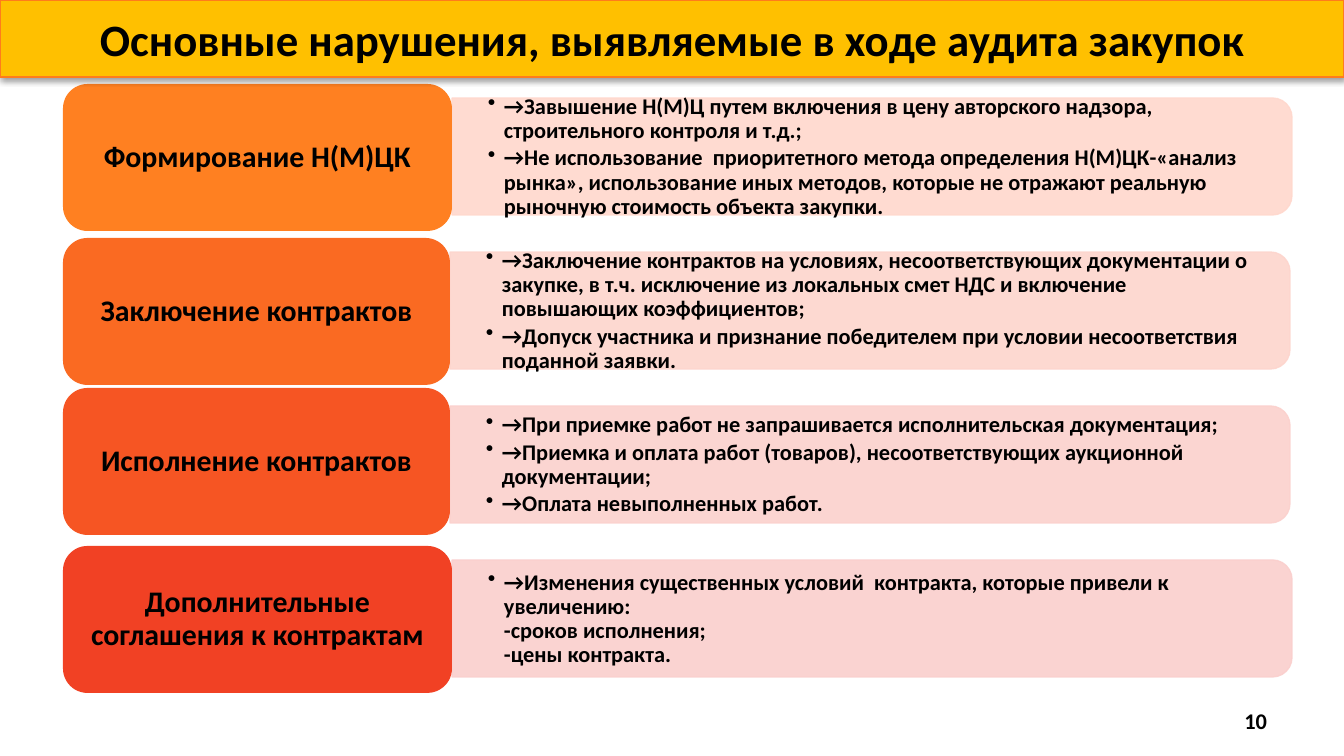
from lxml.etree import SubElement
from pptx import Presentation
from pptx.dml.color import RGBColor
from pptx.enum.shapes import MSO_SHAPE as Shape
from pptx.enum.text import MSO_ANCHOR as Anchor, PP_ALIGN as Align
from pptx.oxml.ns import qn
from pptx.util import Emu, Pt

EMU_PER_PX = 914400 / 134.4
PAGE_WIDTH, PAGE_HEIGHT = 1344, 756
BLACK = RGBColor(0, 0, 0)
GOLD = RGBColor(0xFF, 0xC0, 0x00)
ORANGE = RGBColor(0xFF, 0x7C, 0x1B)

PANEL_TOP, PANEL_STEP = 98, 154
PANEL_WIDTH, PANEL_HEIGHT = 840, 117
LABEL_LEFT, LABEL_HEIGHT = 63, 147

# label, label top, label width, label colour, panel colour, violations
STAGES = [
    ("Формирование Н(М)ЦК", 84, 389, RGBColor(0xFF, 0x80, 0x21), RGBColor(0xFF, 0xD8, 0xCD), [
        "→Завышение Н(М)Ц путем включения в цену авторского надзора, "
        "строительного контроля и т.д.;",
        "→Не использование  приоритетного метода определения Н(М)ЦК-«анализ рынка», "
        "использование иных методов, которые не отражают реальную рыночную "
        "стоимость объекта закупки."]),
    ("Заключение контрактов", 238, 387, RGBColor(0xFA, 0x6A, 0x22), RGBColor(0xFD, 0xD5, 0xCD), [
        "→Заключение контрактов на условиях, несоответствующих документации о закупке, "
        "в т.ч. исключение из локальных смет НДС и включение повышающих коэффициентов;",
        "→Допуск участника и признание победителем при условии несоответствия "
        "поданной заявки."]),
    ("Исполнение контрактов", 388, 387, RGBColor(0xF6, 0x55, 0x23), RGBColor(0xFB, 0xD1, 0xCD), [
        "→При приемке работ не запрашивается исполнительская документация;",
        "→Приемка и оплата работ (товаров), несоответствующих аукционной документации;",
        "→Оплата невыполненных работ."]),
    ("Дополнительные соглашения к контрактам", 546, 389,
     RGBColor(0xF1, 0x41, 0x24), RGBColor(0xFA, 0xCF, 0xCD), [
         "→Изменения существенных условий  контракта, которые привели к увеличению:\n"
         "-сроков исполнения;\n-цены контракта."]),
]


def px(length):
    return Emu(round(length * EMU_PER_PX))


class Painter:
    def __init__(self, page, font="Calibri", color=BLACK):
        self.page, self.font, self.color = page, font, color

    def add_text(self, para, text, size):
        """Add bold runs, with a line break at each newline."""
        for index, line in enumerate(text.split("\n")):
            if index:
                para.add_line_break()
            span = para.add_run()
            span.text = line
            span.font.name, span.font.size = self.font, Pt(size)
            span.font.bold, span.font.color.rgb = True, self.color

    def frame(self, shape, inset_x, inset_y):
        frame = shape.text_frame
        frame.word_wrap = True
        frame.vertical_anchor = Anchor.MIDDLE
        frame.margin_left = frame.margin_right = px(inset_x)
        frame.margin_top = frame.margin_bottom = px(inset_y)
        return frame

    def shape(self, kind, left, top, width, height, fill, line=None):
        shape = self.page.shapes.add_shape(kind, px(left), px(top), px(width), px(height))
        shape.shadow.inherit = False
        shape.fill.solid()
        shape.fill.fore_color.rgb = fill
        if line is None:
            shape.line.fill.background()
        else:
            shape.line.color.rgb, shape.line.width = line, Pt(0.75)
        return shape

    def textbox(self, left, top, width, height):
        return self.page.shapes.add_textbox(px(left), px(top), px(width), px(height))

    def banner(self, text):
        box = self.shape(Shape.ROUNDED_RECTANGLE, 0, 0, PAGE_WIDTH, 77, GOLD, ORANGE)
        box.adjustments[0] = 0
        effects = box.element.spPr.find(qn("a:effectLst"))
        shadow = SubElement(effects, qn("a:outerShdw"), blurRad=str(Pt(3.1)), dist=str(Pt(1.6)),
                            dir="5400000", rotWithShape="0")
        color = SubElement(shadow, qn("a:srgbClr"), val=str(BLACK))
        SubElement(color, qn("a:alpha"), val="38000")
        para = self.frame(box, 13, 7).paragraphs[0]
        para.alignment = Align.CENTER
        self.add_text(para, text, 24)

    def panel(self, left, top, fill):
        """Draw a translucent panel rounded on its right: a turned top-rounded shape."""
        shift = (PANEL_WIDTH - PANEL_HEIGHT) / 2
        panel = self.shape(Shape.ROUND_2_SAME_RECTANGLE, left + shift, top - shift,
                           PANEL_HEIGHT, PANEL_WIDTH, fill, fill)
        panel.rotation = 90
        for color in panel.element.spPr.iter(qn("a:srgbClr")):
            SubElement(color, qn("a:alpha"), val="90000")

    def bullets(self, left, top, items):
        frame = self.frame(self.textbox(left, top + 6, 835, 106), 36, 19)
        for index, item in enumerate(items):
            para = frame.add_paragraph() if index else frame.paragraphs[0]
            props = para._p.get_or_add_pPr()
            props.set("marL", str(px(16)))
            props.set("indent", str(px(-16)))
            SubElement(props, qn("a:buChar"), char="•")
            para.level = 1
            para.line_spacing, para.space_after = 0.9, Pt(1.8)
            self.add_text(para, item, 12)

    def label(self, text, top, width, fill):
        box = self.shape(Shape.ROUNDED_RECTANGLE, LABEL_LEFT, top, width, LABEL_HEIGHT, fill)
        para = self.frame(box, 17, 12).paragraphs[0]
        para.alignment, para.line_spacing = Align.CENTER, 0.9
        self.add_text(para, text, 16)

    def page_number(self, text):
        para = self.frame(self.textbox(1228, 700, 52, 41), 13, 7).paragraphs[0]
        para.alignment = Align.RIGHT
        self.add_text(para, text, 12)


def main():
    deck = Presentation()
    deck.slide_width, deck.slide_height = px(PAGE_WIDTH), px(PAGE_HEIGHT)
    painter = Painter(deck.slides.add_slide(deck.slide_layouts[6]))
    for row, (name, top, width, fill, tint, violations) in enumerate(STAGES):
        panel_left = LABEL_LEFT + width
        panel_top = PANEL_TOP + row * PANEL_STEP
        painter.panel(panel_left, panel_top, tint)
        painter.bullets(panel_left, panel_top, violations)
        painter.label(name, top, width, fill)
    painter.banner("Основные нарушения, выявляемые в ходе аудита закупок")
    painter.page_number("10")
    deck.save("out.pptx")


if __name__ == "__main__":
    main()
